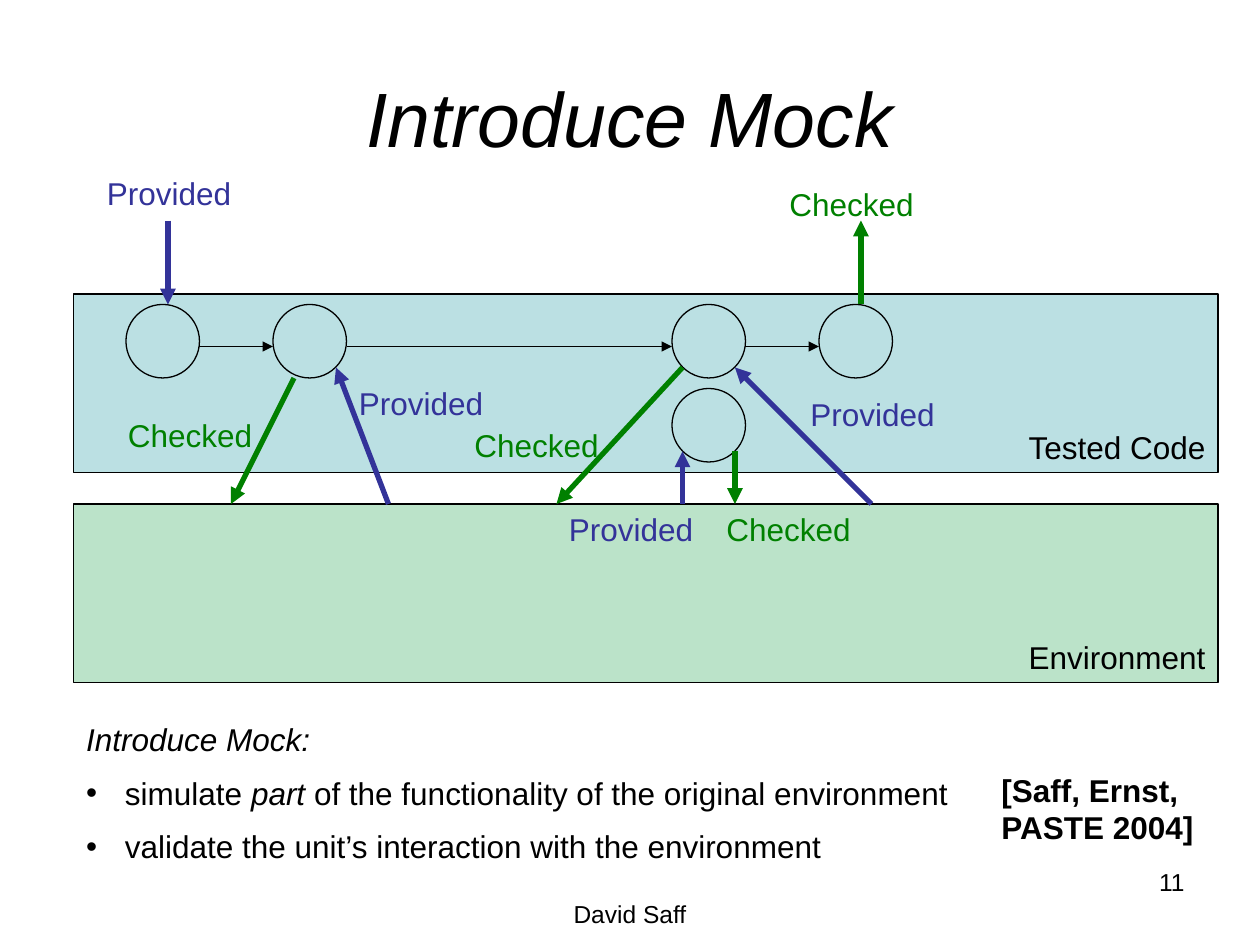
from lxml.etree import SubElement
from pptx import Presentation
from pptx.dml.color import RGBColor
from pptx.enum.shapes import MSO_CONNECTOR as Connector, MSO_SHAPE as Shape
from pptx.enum.text import MSO_ANCHOR as Anchor, MSO_AUTO_SIZE as AutoSize, PP_ALIGN as Align
from pptx.oxml.ns import qn
from pptx.util import Pt

PX = 7620  # 120 px to the inch
FONT = "Arial"
BLACK, GREEN, BLUE = "000000", "008000", "333399"
CODE_FILL, ENVIRONMENT_FILL = "BBE0E3", "BBE3C9"
LABELS = {"Provided": BLUE, "Checked": GREEN}
CIRCLE_SIZE = 70
BULLET_INDENT = 37


def px(*lengths):
    return [length * PX for length in lengths]


def color(hex_code):
    return RGBColor.from_string(hex_code)


def write(paragraph, text, size=18, ink=BLACK, bold=False, italic=False, align=Align.LEFT):
    run = paragraph.add_run()
    run.text = text
    font = run.font
    font.name, font.size, font.bold, font.italic = FONT, Pt(size), bold, italic
    font.color.rgb = color(ink)
    paragraph.alignment = align


def add_text(slide, box, *lines, wrap=True, **style):
    frame = slide.shapes.add_textbox(*px(*box)).text_frame
    frame.word_wrap = wrap
    for index, line in enumerate(lines):
        paragraph = frame.add_paragraph() if index else frame.paragraphs[0]
        write(paragraph, line, **style)


def add_outlined(slide, kind, box, fill=None):
    shape = slide.shapes.add_shape(kind, *px(*box))
    shape.shadow.inherit = False
    if fill:
        shape.fill.solid()
        shape.fill.fore_color.rgb = color(fill)
    else:
        shape.fill.background()
    shape.line.color.rgb = color(BLACK)
    shape.line.width = Pt(0.75)
    return shape


def add_band(slide, top, name, fill):
    frame = add_outlined(slide, Shape.RECTANGLE, (70, top, 1090, 170), fill).text_frame
    frame.vertical_anchor = Anchor.BOTTOM
    write(frame.paragraphs[0], name, align=Align.RIGHT)


def add_circle(slide, left, top, fill=None):
    add_outlined(slide, Shape.OVAL, (left, top, CIRCLE_SIZE, CIRCLE_SIZE), fill)


def add_arrow(slide, start, end, ink=BLACK, width=3):
    arrow = slide.shapes.add_connector(Connector.STRAIGHT, *px(*start, *end))
    arrow.line.color.rgb = color(ink)
    arrow.line.width = Pt(width)
    SubElement(arrow.line._get_or_add_ln(), qn("a:tailEnd"), type="triangle")
    SubElement(arrow._element.spPr, qn("a:effectLst"))


def place(placeholder, box):
    """Move a placeholder and return its text frame without autofit."""
    placeholder.left, placeholder.top, placeholder.width, placeholder.height = px(*box)
    frame = placeholder.text_frame
    frame.auto_size = AutoSize.NONE
    return frame


def set_bullet(paragraph, bulleted):
    properties = paragraph._p.get_or_add_pPr()
    indent = BULLET_INDENT * PX if bulleted else 0
    properties.set("marL", str(indent))
    properties.set("indent", str(-indent))
    if bulleted:
        SubElement(properties, qn("a:buChar"), char="•")
    else:
        SubElement(properties, qn("a:buNone"))


def fill_body(body):
    """Write each line as pairs of text and italic."""
    frame = place(body, (70, 680, 1090, 156))
    frame.vertical_anchor = Anchor.TOP
    lines = [
        [("Introduce Mock:", True)],
        [("simulate ", False), ("part", True),
         (" of the functionality of the original environment", False)],
        [("validate the unit’s interaction with the environment", False)],
    ]
    for index, line in enumerate(lines):
        paragraph = frame.add_paragraph() if index else frame.paragraphs[0]
        paragraph.space_before = Pt(9 if index else 0)
        set_bullet(paragraph, bulleted=index > 0)
        for text, italic in line:
            write(paragraph, text, italic=italic)


def add_diagram(slide):
    add_band(slide, 480, "Environment", ENVIRONMENT_FILL)
    add_band(slide, 280, "Tested Code", CODE_FILL)

    steps = [120, 260, 640, 780]
    for left in steps:
        add_circle(slide, left, 290, CODE_FILL)
    add_circle(slide, 640, 370)
    for left, following in zip(steps, steps[1:]):
        add_arrow(slide, (left + CIRCLE_SIZE, 330), (following, 330), width=0.75)

    for start, end, label in [
        ((160, 210), (160, 290), "Provided"),
        ((280, 360), (220, 480), "Checked"),
        ((370, 480), (320, 350), "Provided"),
        ((650, 350), (530, 480), "Checked"),
        ((650, 480), (650, 430), "Provided"),
        ((700, 430), (700, 480), "Checked"),
        ((830, 480), (700, 350), "Provided"),
        ((820, 290), (820, 210), "Checked"),
    ]:
        add_arrow(slide, start, end, LABELS[label])

    for label, positions in {
        "Provided": [(90, 160), (330, 360), (530, 480), (760, 370)],
        "Checked": [(110, 390), (440, 400), (680, 480), (740, 170)],
    }.items():
        for left, top in positions:
            add_text(slide, (left, top, 170, 48), label, ink=LABELS[label])


def main():
    deck = Presentation()
    deck.slide_width, deck.slide_height = px(1200, 900)
    slide = deck.slides.add_slide(deck.slide_layouts[1])
    title, body = slide.placeholders

    heading = place(title, (60, 36, 1080, 150))
    heading.vertical_anchor = Anchor.MIDDLE
    write(heading.paragraphs[0], "Introduce Mock", size=44, italic=True, align=Align.CENTER)
    add_diagram(slide)
    fill_body(body)
    add_text(slide, (942, 728, 209, 84), "[Saff, Ernst,", "PASTE 2004]", wrap=False, bold=True)
    add_text(slide, (410, 850, 380, 33), "David Saff", size=14, align=Align.CENTER)
    add_text(slide, (860, 820, 280, 62), "11", size=14, align=Align.RIGHT)
    deck.save("out.pptx")


if __name__ == "__main__":
    main()
